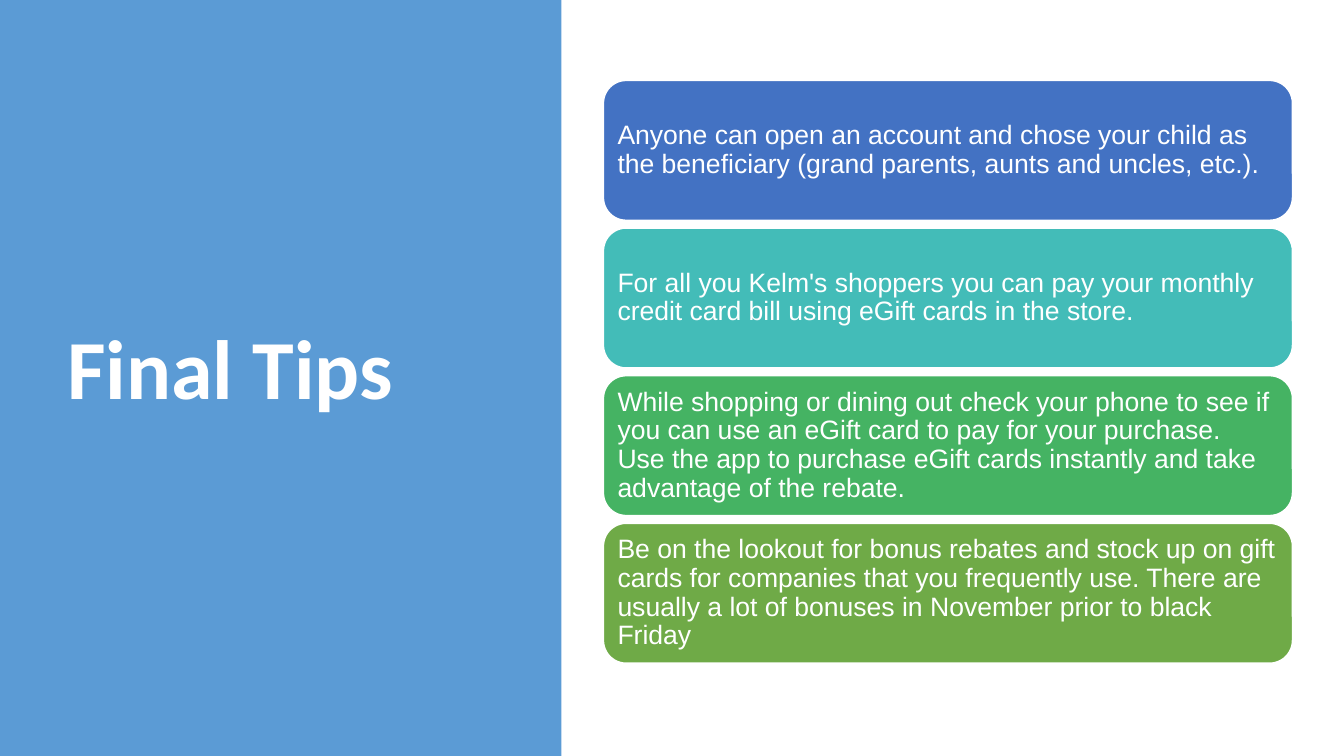
from pptx import Presentation
from pptx import util as u
from pptx.dml.color import RGBColor
from pptx.enum import shapes, text

WHITE = RGBColor(0xFF, 0xFF, 0xFF)
SKY = RGBColor(0x5B, 0x9B, 0xD5)
BLUE = RGBColor(0x43, 0x72, 0xC3)
TEAL = RGBColor(0x43, 0xBC, 0xB8)
GREEN = RGBColor(0x45, 0xB3, 0x63)
OLIVE = RGBColor(0x6F, 0xAA, 0x47)

TIPS = [
    (BLUE, "Anyone can open an account and chose your child as the beneficiary "
           "(grand parents, aunts and uncles, etc.)."),
    (TEAL, "For all you Kelm's shoppers you can pay your monthly credit card bill "
           "using eGift cards in the store."),
    (GREEN, "While shopping or dining out check your phone to see if you can use "
            "an eGift card to pay for your purchase.\n"
            "Use the app to purchase eGift cards instantly and take advantage of the rebate."),
    (OLIVE, "Be on the lookout for bonus rebates and stock up on gift cards for companies "
            "that you frequently use. There are usually a lot of bonuses in November "
            "prior to black Friday"),
]
CARD_TOP, CARD_STEP = 2.01, 3.72


class TipsPage:
    """Draws the panel, title and tip cards in one shared style."""

    def __init__(self, page):
        self.page = page
        self.title_font = "Calibri"
        self.body_font = "Arial"

    def block(self, kind, left, top, width, height, fill):
        box = self.page.shapes.add_shape(
            kind, u.Cm(left), u.Cm(top), u.Cm(width), u.Cm(height))
        box.shadow.inherit = False
        box.fill.solid()
        box.fill.fore_color.rgb = fill
        box.line.fill.background()
        return box

    def label(self, box, wording, font, size, bold=False):
        frame = box.text_frame
        frame.word_wrap = True
        frame.vertical_anchor = text.MSO_ANCHOR.MIDDLE
        para = frame.paragraphs[0]
        para.alignment = text.PP_ALIGN.LEFT
        para.line_spacing = 0.9
        for index, line in enumerate(wording.split("\n")):
            if index:
                para.add_line_break()
            span = para.add_run()
            span.text = line
            span.font.name = font
            span.font.size = u.Pt(size)
            span.font.bold = bold
            span.font.color.rgb = WHITE

    def panel(self):
        self.block(shapes.MSO_SHAPE.RECTANGLE, 0, 0, 14.15, 19.05, SKY)

    def title(self, wording):
        box = self.page.shapes.add_textbox(
            u.Cm(1.45), u.Cm(1.73), u.Cm(10.57), u.Cm(15.29))
        self.label(box, wording, self.title_font, 60, bold=True)

    def card(self, top, fill, wording):
        box = self.block(
            shapes.MSO_SHAPE.ROUNDED_RECTANGLE, 15.19, top, 17.4, 3.56, fill)
        box.line.color.rgb = WHITE
        box.line.width = u.Pt(2)
        frame = box.text_frame
        frame.margin_left = frame.margin_right = u.Cm(0.2)
        frame.margin_top = frame.margin_bottom = u.Cm(0.2)
        self.label(box, wording, self.body_font, 19)


def main():
    deck = Presentation()
    deck.slide_width, deck.slide_height = u.Cm(33.87), u.Cm(19.05)
    tips_page = TipsPage(deck.slides.add_slide(deck.slide_layouts[6]))
    tips_page.panel()
    tips_page.title("Final Tips")
    for index, (fill, wording) in enumerate(TIPS):
        tips_page.card(CARD_TOP + index * CARD_STEP, fill, wording)
    deck.save("out.pptx")


if __name__ == "__main__":
    main()
